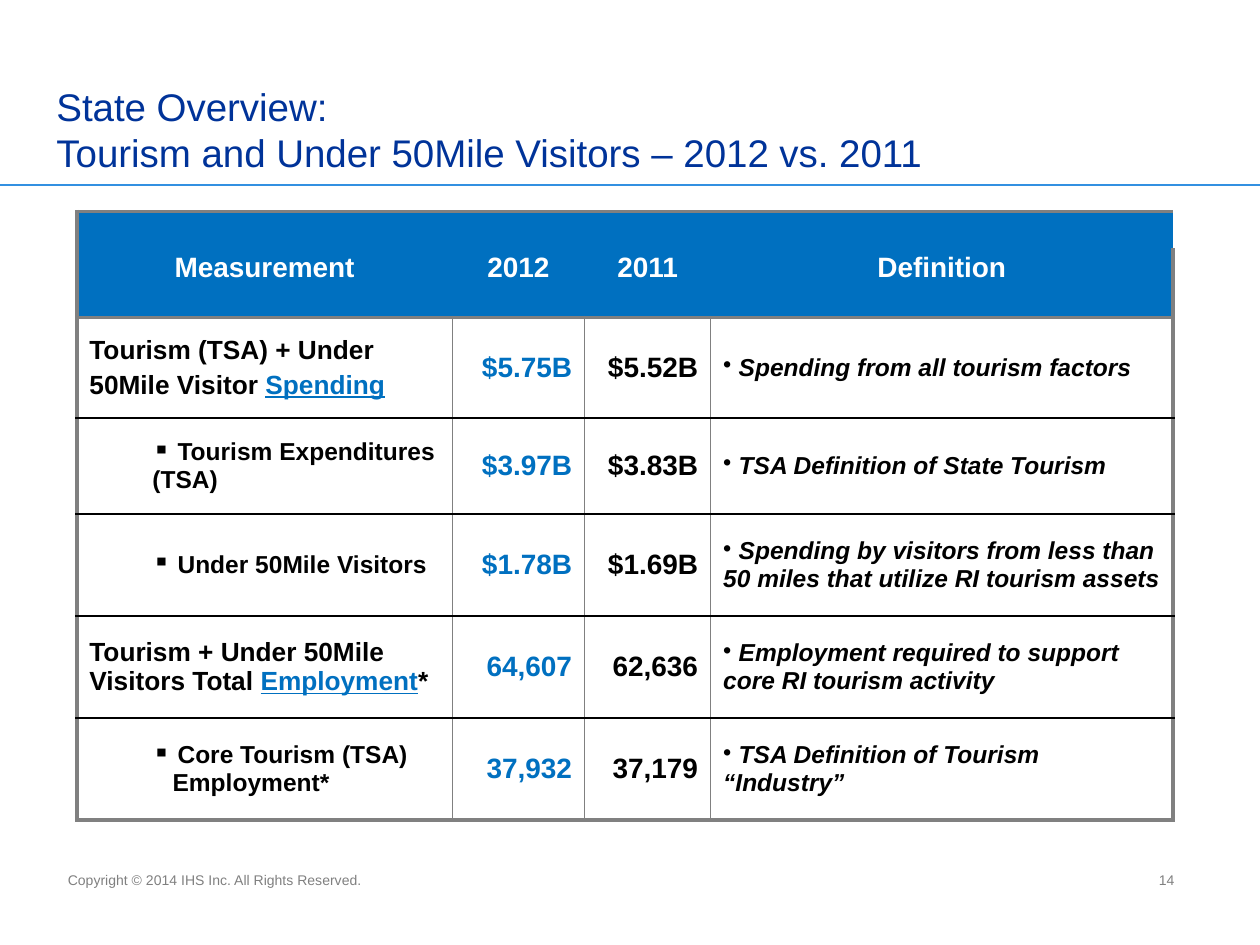
from lxml import etree
from pptx import Presentation
from pptx.dml.color import RGBColor
from pptx.enum import shapes, text
from pptx.oxml.ns import qn
from pptx.util import Inches, Pt

COLORS = {"navy": "003399", "rule": "3390E1", "blue": "0070C0", "gray": "808080",
          "black": "000000", "white": "FFFFFF"}
FONT = "Arial"
LEFT, CENTER, RIGHT = text.PP_ALIGN.LEFT, text.PP_ALIGN.CENTER, text.PP_ALIGN.RIGHT

TITLE = "State Overview:\vTourism and Under 50Mile Visitors – 2012 vs. 2011"
COPYRIGHT = "Copyright © 2014 IHS Inc. All Rights Reserved."
PAGE_NUMBER = "14"

HEADINGS = ["Measurement", "2012", "2011", "Definition"]
# Level ("total" or "part"), measurement lines, 2012, 2011, definition.
# A measurement line is a list of runs; a run in KEY_WORDS is highlighted.
KEY_WORDS = {"Spending", "Employment"}
MEASURES = [
    ("total", [["Tourism (TSA) + Under"], ["50Mile Visitor ", "Spending"]],
     "$5.75B", "$5.52B", "Spending from all tourism factors"),
    ("part", [["Tourism Expenditures (TSA)"]],
     "$3.97B", "$3.83B", "TSA Definition of State Tourism"),
    ("part", [["Under 50Mile Visitors"]],
     "$1.78B", "$1.69B",
     "Spending by visitors from less than 50 miles that utilize RI tourism assets"),
    ("total", [["Tourism + Under 50Mile Visitors Total ", "Employment", "*"]],
     "64,607", "62,636", "Employment required to support core RI tourism activity"),
    ("part", [["Core Tourism (TSA)"], ["Employment*"]],
     "37,932", "37,179", "TSA Definition of Tourism “Industry”"),
]
COLUMN_WIDTHS = [2.98, 1.05, 1, 3.67]
HEADER_HEIGHTS = [0.29, 0.32, 0.23]
MEASURE_HEIGHTS = [0.8, 0.76, 0.81, 0.81, 0.81]
ROW_HEIGHTS = HEADER_HEIGHTS + MEASURE_HEIGHTS
HEADER_ROWS = len(HEADER_HEIGHTS)
TABLE_LEFT, TABLE_TOP = 0.61, 1.68
PART_INDENT, CONTINUED_INDENT = 0.5, 0.66


def rgb(name):
    return RGBColor.from_string(COLORS[name])


def style(paragraph, size, color, align=LEFT, bold=False, italic=False):
    paragraph.alignment = align
    font = paragraph.font
    font.name, font.size = FONT, Pt(size)
    font.bold, font.italic = bold, italic
    font.color.rgb = rgb(color)


def add_text(slide, box, words, size, color, anchor, align=LEFT):
    shape = slide.shapes.add_textbox(*map(Inches, box))
    frame = shape.text_frame
    frame.word_wrap = True
    frame.vertical_anchor = anchor
    frame.text = words
    style(frame.paragraphs[0], size, color, align)


def add_rule(slide, y):
    line = slide.shapes.add_connector(shapes.MSO_CONNECTOR.STRAIGHT,
                                      0, Inches(y), Inches(10), Inches(y))
    line.line.color.rgb = rgb("rule")
    line.line.width = Pt(1)
    etree.SubElement(line._element.spPr, qn("a:effectLst"))


def indent(paragraph, inches, bullet=None):
    properties = paragraph._p.get_or_add_pPr()
    properties.set("marL", str(Inches(inches)))
    properties.set("indent", "0")
    if bullet:
        etree.SubElement(properties, qn("a:buChar")).set("char", bullet)


def set_border(cell, side, color=None, width=1):
    """Draw one side (L, R, T or B) of a cell, or hide it when no colour is given."""
    line = etree.SubElement(cell._tc.get_or_add_tcPr(), qn(f"a:ln{side}"))
    if color:
        line.set("w", str(Pt(width)))
        fill = etree.SubElement(line, qn("a:solidFill"))
        etree.SubElement(fill, qn("a:srgbClr")).set("val", COLORS[color])
    else:
        etree.SubElement(line, qn("a:noFill"))


def format_cell(cell, row, column):
    last_row, last_column = len(ROW_HEIGHTS) - 1, len(COLUMN_WIDTHS) - 1
    header = row < HEADER_ROWS
    heavy = {"L": column == 0, "R": column == last_column,
             "T": row in (0, HEADER_ROWS),
             "B": row in (HEADER_ROWS - 1, last_row)}
    for side, is_heavy in heavy.items():
        if is_heavy:
            set_border(cell, side, "gray", 2.25)
        elif header:
            set_border(cell, side)
        else:
            set_border(cell, side, "gray" if side in "LR" else "black")
    cell.fill.solid()
    cell.fill.fore_color.rgb = rgb("blue" if header else "white")
    cell.vertical_anchor = text.MSO_ANCHOR.MIDDLE
    cell.margin_left = cell.margin_right = Inches(0.1)
    cell.margin_top = cell.margin_bottom = Inches(0.01)
    if header and row != 1:
        # Keeps the empty bands of the header from growing.
        end = etree.SubElement(cell.text_frame.paragraphs[0]._p, qn("a:endParaRPr"))
        end.set("sz", "800")


def fill_measurement(cell, level, lines):
    frame = cell.text_frame
    for number, runs in enumerate(lines):
        paragraph = frame.add_paragraph() if number else frame.paragraphs[0]
        if level == "part":
            if number:
                indent(paragraph, CONTINUED_INDENT)
            else:
                indent(paragraph, PART_INDENT, "▪")
                runs = [" " + runs[0]] + runs[1:]
        elif number:
            paragraph.space_before = Pt(3)
        style(paragraph, 15 if level == "total" else 14, "black", bold=True)
        for words in runs:
            run = paragraph.add_run()
            run.text = words
            if words in KEY_WORDS:
                run.font.underline = True
                run.font.color.rgb = rgb("blue")


def add_table(slide):
    frame = slide.shapes.add_table(
        len(ROW_HEIGHTS), len(COLUMN_WIDTHS), Inches(TABLE_LEFT), Inches(TABLE_TOP),
        Inches(sum(COLUMN_WIDTHS)), Inches(sum(ROW_HEIGHTS)))
    table = frame.table
    table.first_row = table.horz_banding = False
    for column, width in zip(table.columns, COLUMN_WIDTHS):
        column.width = Inches(width)
    for row, height in zip(table.rows, ROW_HEIGHTS):
        row.height = Inches(height)
    for row in range(len(ROW_HEIGHTS)):
        for column in range(len(COLUMN_WIDTHS)):
            format_cell(table.cell(row, column), row, column)
    table.cell(0, 0).merge(table.cell(0, len(COLUMN_WIDTHS) - 1))

    for column, heading in enumerate(HEADINGS):
        cell = table.cell(1, column)
        cell.text = heading
        style(cell.text_frame.paragraphs[0], 16, "white", CENTER, bold=True)

    for row, (level, lines, current, previous, definition) in enumerate(MEASURES, HEADER_ROWS):
        fill_measurement(table.cell(row, 0), level, lines)
        for column, value, color in ((1, current, "blue"), (2, previous, "black")):
            cell = table.cell(row, column)
            cell.text = value
            style(cell.text_frame.paragraphs[0], 16, color, RIGHT, bold=True)
        cell = table.cell(row, 3)
        cell.text = " " + definition
        paragraph = cell.text_frame.paragraphs[0]
        indent(paragraph, 0, "•")
        style(paragraph, 14, "black", bold=True, italic=True)


def main():
    presentation = Presentation()
    presentation.slide_width, presentation.slide_height = Inches(10), Inches(7.5)
    slide = presentation.slides.add_slide(presentation.slide_layouts[6])
    add_rule(slide, 1.47)
    top, bottom = text.MSO_ANCHOR.TOP, text.MSO_ANCHOR.BOTTOM
    add_text(slide, (0.44, 6.87, 3.57, 0.23), COPYRIGHT, 8, "gray", top)
    add_text(slide, (0.35, 0.52, 8.64, 0.92), TITLE, 22, "navy", bottom)
    add_text(slide, (8.42, 6.77, 1, 0.33), PAGE_NUMBER, 8, "gray", bottom, RIGHT)
    add_table(slide)
    presentation.save("out.pptx")


if __name__ == "__main__":
    main()
